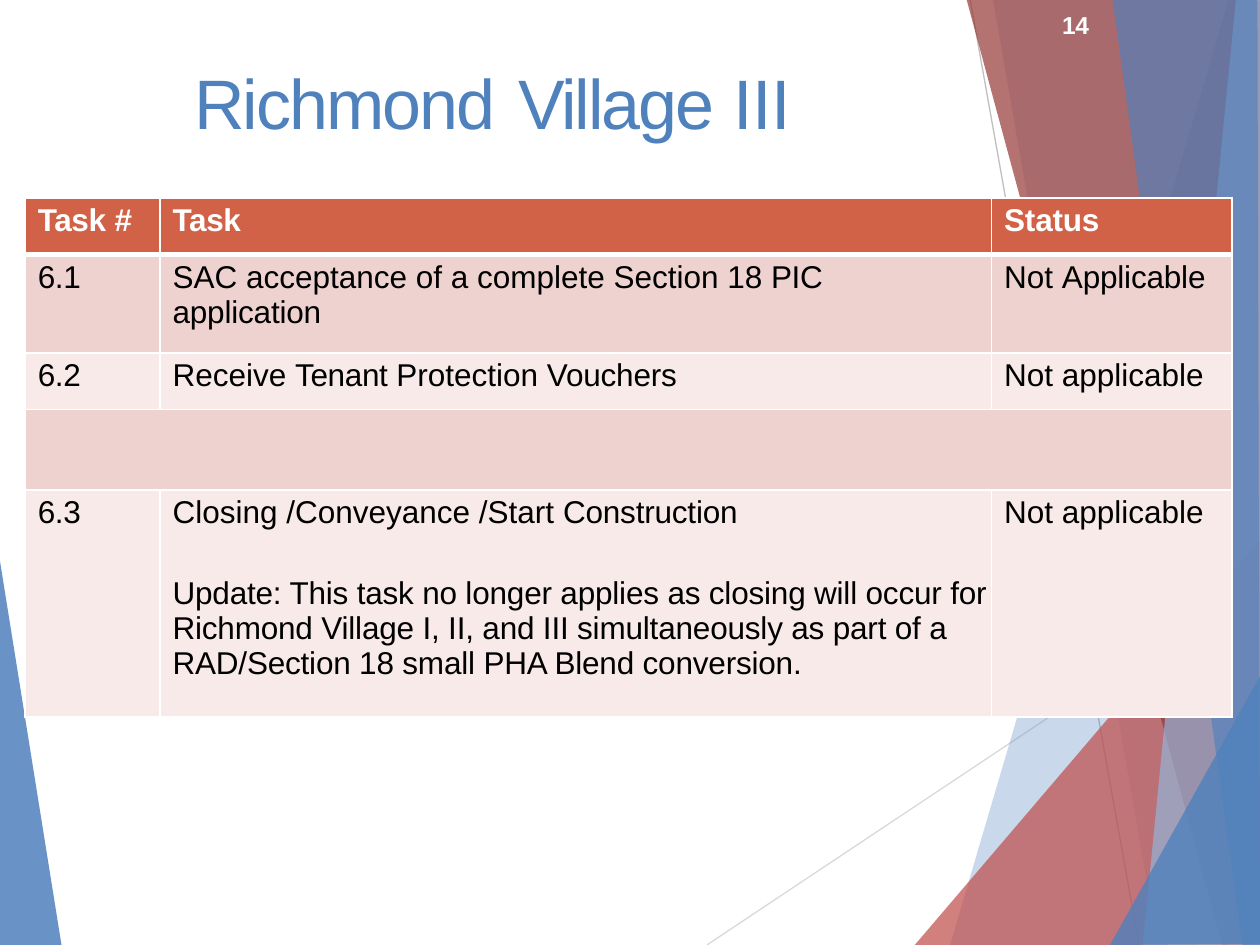
import pptx
import pptx.util
import pptx.dml.color
import pptx.enum.shapes
import pptx.oxml
import pptx.oxml.ns
import lxml.etree

Inches = pptx.util.Inches
Pt = pptx.util.Pt
qn = pptx.oxml.ns.qn

COLORS = {
    "blue": "4F81BD", "light_blue": "95B3D7", "red": "C0504D", "dark_red": "953735",
    "pale_gray": "D9D9D9", "gray": "BFBFBF", "header": "D16248",
    "band_dark": "EDD2CF", "band_light": "F7EAE9", "white": "FFFFFF", "black": "000000",
}

RAYS_BEHIND = [
    ("blue", 85, [(-0.01, 4.39), (0.49, 7.51), (-0.01, 7.5)]),
]
LINES = [
    ("pale_gray", (5.61, 7.5), (10.01, 4.57)),
    ("gray", (7.7, 0), (9.04, 7.5)),
]
RAYS_FRONT = [
    ("blue", 30, [(9.75, 0), (7.54, 7.5), (10.02, 7.51), (10.01, 0.01)]),
    ("blue", 20, [(7.88, -0.01), (9.19, 7.5), (10.01, 7.5), (10.01, -0.01)]),
    ("red", 72, [(7.26, 7.5), (10, 4.29), (10.01, 7.5)]),
    ("dark_red", 70, [(7.67, -0.01), (9.7, 7.5), (10.01, 7.49), (10.01, -0.01)]),
    ("light_blue", 70, [(9.81, -0.01), (9.07, 7.5), (10.01, 7.5), (10, -0.01)]),
    ("blue", 65, [(8.83, -0.01), (9.86, 7.5), (10, 7.5), (9.98, -0.01)]),
    ("blue", 80, [(8.81, 7.5), (10.01, 5.35), (10.01, 7.49)]),
]

TITLE = [("Richmond", -1.1), (" ", 2), ("Village", -1.2), (" III", -0.2)]
COLUMN_WIDTHS = [1.07, 6.6, 1.91]
ROW_HEIGHTS = [0.45, 0.78, 0.45, 0.64, 1.8]
UPDATE = (
    "Update: This task no longer applies as closing will occur for Richmond Village I, II, "
    "and III simultaneously as part of a RAD/Section 18 small PHA Blend conversion."
)
TASK_ROWS = [
    [[[("Task ", -0.2), ("#", -0.5)]], [[("Task", -0.2)]], [[("Status", -0.1)]]],
    [[[("6.1", -0.2)]],
     [[("SAC acceptance of a complete Section 18", 0), (" PIC ", -0.2), ("application", -0.1)]],
     [[("Not ", 0), ("Applicable", -0.1)]]],
    [[[("6.2", -0.2)]],
     [[("Receive ", 0), ("Tenant ", -0.2), ("Protection ", 0), ("Vouchers", -0.1)]],
     [[("Not applicable", 0)]]],
    [[], [], []],
    [[[("6.3", -0.2)]],
     [[("Closing /Conveyance /Start ", 0), ("Construction", -0.1)], [(UPDATE, -0.1)]],
     [[("Not applicable", 0)]]],
]


class PageBuilder:
    font = "Arial"

    def __init__(self, page):
        self.page = page

    def color(self, name):
        return pptx.dml.color.RGBColor.from_string(COLORS[name])

    def ray(self, color, opacity, points):
        corners = [(Inches(x), Inches(y)) for x, y in points]
        builder = self.page.shapes.build_freeform(*corners[0])
        builder.add_line_segments(corners[1:], close=True)
        shape = builder.convert_to_shape()
        shape.shadow.inherit = False
        shape.line.fill.background()
        shape.fill.solid()
        shape.fill.fore_color.rgb = self.color(color)
        tint = shape._element.spPr.find(qn("a:solidFill"))[0]
        lxml.etree.SubElement(tint, qn("a:alpha"), val=str(opacity * 1000))

    def line(self, color, start, end):
        connector = self.page.shapes.add_connector(
            pptx.enum.shapes.MSO_CONNECTOR.STRAIGHT,
            *[Inches(value) for value in (*start, *end)])
        connector.line.color.rgb = self.color(color)
        connector.line.width = Pt(0.75)
        lxml.etree.SubElement(connector._element.spPr, qn("a:effectLst"))

    def paragraph(self, para, spans, size, color, bold=False, before=0):
        para.space_before = Pt(before)
        para.font.name = self.font
        para.font.size = Pt(size)
        para.font.bold = bold
        para.font.color.rgb = self.color(color)
        for text, spacing in spans:
            span = para.add_run()
            span.text = text
            span._r.get_or_add_rPr().set("spc", str(round(spacing * 100)))

    def text(self, bounds, spans, size, color, bold=False):
        box = self.page.shapes.add_textbox(*[Inches(value) for value in bounds])
        frame = box.text_frame
        frame.word_wrap = True
        frame.margin_left = frame.margin_top = Inches(0.01)
        frame.margin_right = frame.margin_bottom = 0
        self.paragraph(frame.paragraphs[0], spans, size, color, bold, before=1)

    def borders(self, cell, widths):
        properties = cell._tc.get_or_add_tcPr()
        for side, width in zip("LRTB", widths):
            border = lxml.etree.SubElement(properties, qn(f"a:ln{side}"), w=str(Pt(width)))
            fill = lxml.etree.SubElement(border, qn("a:solidFill"))
            lxml.etree.SubElement(fill, qn("a:srgbClr"), val=COLORS["white"])

    def cell(self, cell, paragraphs, row):
        header = row == 0
        self.borders(cell, (1, 1, 3 if row == 1 else 1, 3 if header else 1))
        cell.fill.solid()
        fill = "header" if header else "band_dark" if row % 2 else "band_light"
        cell.fill.fore_color.rgb = self.color(fill)
        cell.margin_left, cell.margin_top = Inches(0.1), Inches(0.04)
        cell.margin_right = cell.margin_bottom = 0
        for index, spans in enumerate(paragraphs):
            frame = cell.text_frame
            para = frame.add_paragraph() if index else frame.paragraphs[0]
            self.paragraph(para, spans, 18, "white" if header else "black", header,
                           before=26 if index else 3.1)

    def table(self, left, top, widths, heights, rows):
        table = self.page.shapes.add_table(
            len(heights), len(widths), Inches(left), Inches(top),
            Inches(sum(widths)), Inches(sum(heights))).table
        for column, width in zip(table.columns, widths):
            column.width = Inches(width)
        for index, (height, contents) in enumerate(zip(heights, rows)):
            table.rows[index].height = Inches(height)
            for cell, paragraphs in zip(table.rows[index].cells, contents):
                self.cell(cell, paragraphs, index)
        return table


def main():
    deck = pptx.Presentation()
    deck.slide_width, deck.slide_height = Inches(10), Inches(7.5)
    builder = PageBuilder(deck.slides.add_slide(deck.slide_layouts[6]))
    for ray in RAYS_BEHIND:
        builder.ray(*ray)
    for line in LINES:
        builder.line(*line)
    for ray in RAYS_FRONT:
        builder.ray(*ray)
    builder.text((1.53, 0.46, 5.85, 0.69), TITLE, 40, "blue")
    table = builder.table(0.2, 1.57, COLUMN_WIDTHS, ROW_HEIGHTS, TASK_ROWS)
    table.cell(1, 1).margin_right = Inches(0.6)
    table.cell(3, 0).merge(table.cell(3, 2))
    builder.text((8.42, 0.07, 0.24, 0.26), [("14", -0.2)], 14, "white", bold=True)
    deck.save("out.pptx")


if __name__ == "__main__":
    main()
